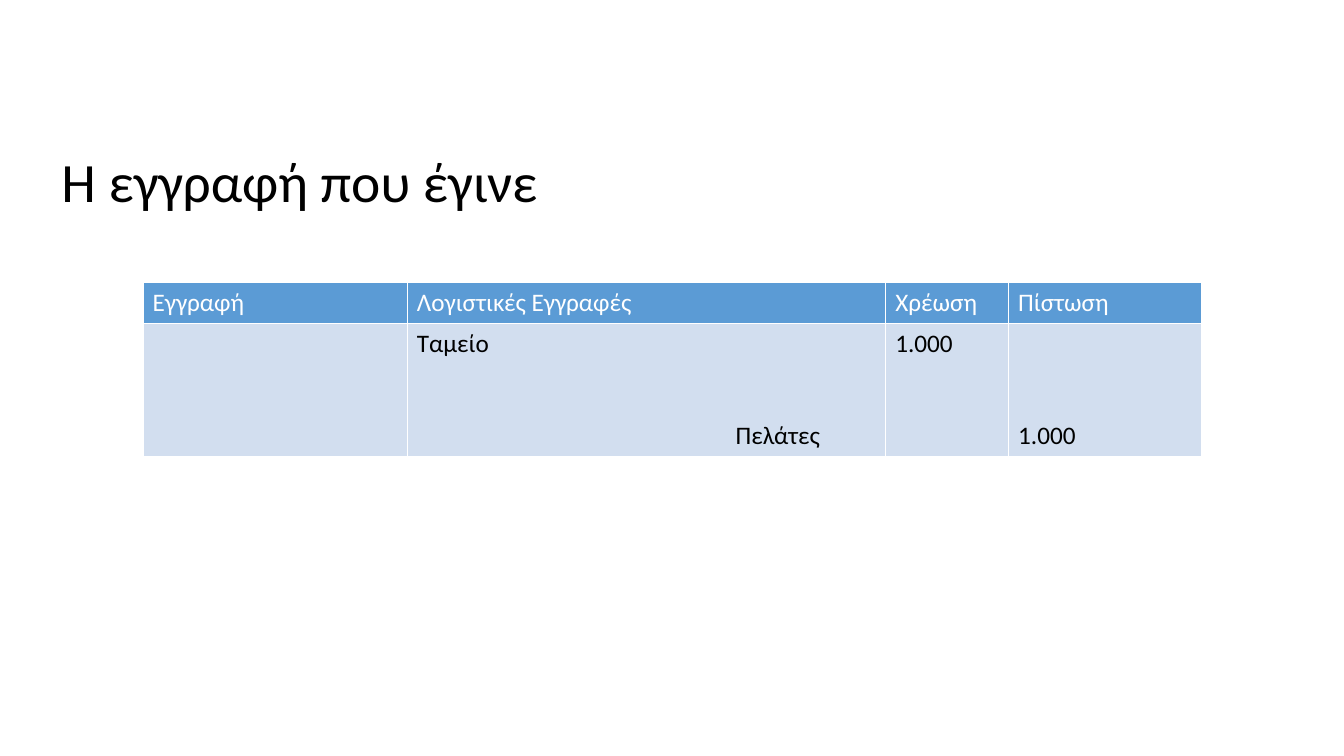
from lxml import etree
from pptx import Presentation
from pptx.dml.color import RGBColor
from pptx.enum.text import MSO_ANCHOR, PP_ALIGN
from pptx.oxml.ns import qn
from pptx.util import Pt

LEFT, RIGHT = PP_ALIGN.LEFT, PP_ALIGN.RIGHT
TOP, BOTTOM = MSO_ANCHOR.TOP, MSO_ANCHOR.BOTTOM
BLACK = RGBColor(0x00, 0x00, 0x00)
WHITE = RGBColor(0xFF, 0xFF, 0xFF)
HEADER_BLUE = RGBColor(0x5B, 0x9B, 0xD5)
BODY_BLUE = RGBColor(0xD2, 0xDE, 0xEF)

TITLE_BOX = (36.7, 15.1, 884.2, 146.2)
LEDGER_BOX = (102.2, 201.6, 756, 124.5)
COLUMN_WIDTHS = (188.8, 341.8, 87.8, 137.6)
HEADER_HEIGHT = 29.2
HEADINGS = ("Εγγραφή", "Λογιστικές Εγγραφές", "Χρέωση", "Πίστωση")
CREDIT_GAP = 44
CREDIT_INSET = 47


def apply_format(target, values):
    """Set each named attribute on the target."""
    for name, value in values.items():
        setattr(target, name, value)


def write_line(paragraph, wording, size, color, **layout):
    """Write one formatted line into a paragraph."""
    apply_format(paragraph, layout)
    run = paragraph.add_run()
    run.text = wording
    apply_format(run.font, {"name": "Calibri", "size": Pt(size), "bold": False})
    run.font.color.rgb = color


def add_title(slide, box):
    """Place the heading at the foot of its box."""
    title = slide.shapes.title
    left, top, width, height = map(Pt, box)
    apply_format(title, {"left": left, "top": top, "width": width, "height": height})
    apply_format(title.text_frame, {
        "word_wrap": True, "vertical_anchor": BOTTOM, "margin_left": Pt(7.2),
        "margin_right": Pt(7.2), "margin_bottom": Pt(7.9)})
    write_line(title.text_frame.paragraphs[0], "Η εγγραφή που έγινε", 39.6, BLACK,
               alignment=LEFT, line_spacing=0.9)


def style_cell(cell, color):
    """Fill a cell and rule its four sides in white."""
    properties = cell._tc.get_or_add_tcPr()
    for side in ("a:lnL", "a:lnR", "a:lnT", "a:lnB"):
        line = etree.SubElement(properties, qn(side), w=str(Pt(1)))
        fill = etree.SubElement(line, qn("a:solidFill"))
        etree.SubElement(fill, qn("a:srgbClr"), val=str(WHITE))
    cell.fill.solid()
    cell.fill.fore_color.rgb = color
    apply_format(cell, {"margin_left": Pt(6.8), "margin_right": Pt(6.8),
                        "margin_top": Pt(3.6), "margin_bottom": Pt(3.6),
                        "vertical_anchor": TOP})


def add_ledger(slide, box):
    """Place the journal entry table in its box."""
    ledger = slide.shapes.add_table(2, len(HEADINGS), *map(Pt, box)).table
    for column, width in zip(ledger.columns, COLUMN_WIDTHS):
        column.width = Pt(width)
    for row, height in zip(ledger.rows, (HEADER_HEIGHT, box[3] - HEADER_HEIGHT)):
        row.height = Pt(height)
    for index, heading in enumerate(HEADINGS):
        header = ledger.cell(0, index)
        style_cell(header, HEADER_BLUE)
        style_cell(ledger.cell(1, index), BODY_BLUE)
        write_line(header.text_frame.paragraphs[0], heading, 18, WHITE)

    accounts, debit, credit = (ledger.cell(1, index) for index in (1, 2, 3))
    accounts.margin_right = Pt(CREDIT_INSET)
    credit.vertical_anchor = BOTTOM
    for cell, wording in ((accounts, "Ταμείο"), (debit, "1.000"), (credit, "1.000")):
        write_line(cell.text_frame.paragraphs[0], wording, 18, BLACK)
    write_line(accounts.text_frame.add_paragraph(), "Πελάτες", 18, BLACK,
               alignment=RIGHT, space_before=Pt(CREDIT_GAP))


def main():
    """Build and save the slide."""
    deck = Presentation()
    apply_format(deck, {"slide_width": Pt(960), "slide_height": Pt(540)})
    slide = deck.slides.add_slide(deck.slide_layouts[5])
    add_title(slide, TITLE_BOX)
    add_ledger(slide, LEDGER_BOX)
    deck.save("out.pptx")


if __name__ == "__main__":
    main()
